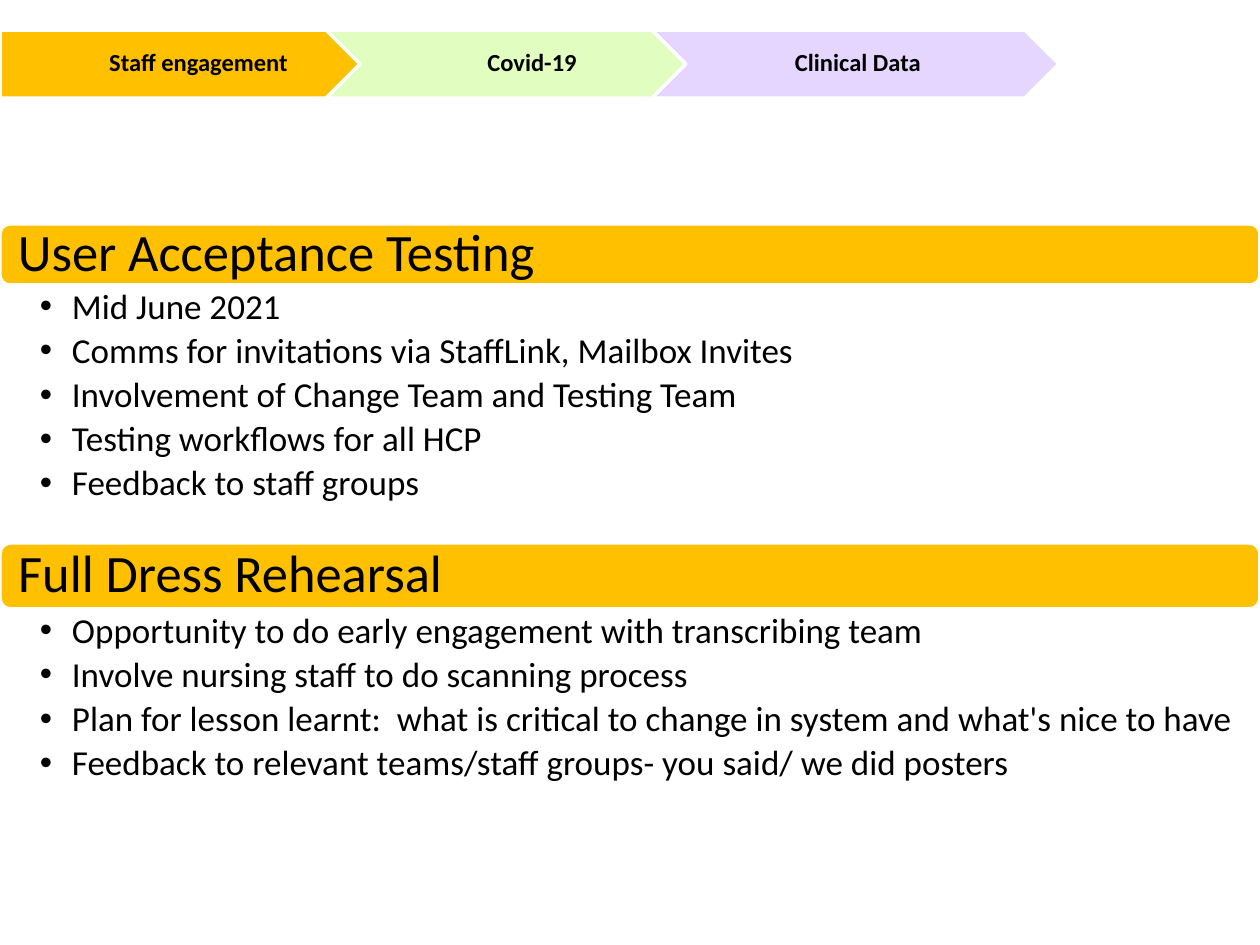
from lxml.etree import SubElement
from pptx import Presentation
from pptx.dml.color import RGBColor
from pptx.enum.shapes import MSO_SHAPE as SHAPE
from pptx.enum.text import MSO_ANCHOR as ANCHOR, MSO_AUTO_SIZE as AUTO, PP_ALIGN as ALIGN
from pptx.oxml.ns import qn
from pptx.util import Emu, Pt

PX_PER_INCH = 126
WIDTH, HEIGHT = 1260, 945

AMBER = RGBColor(0xFF, 0xC0, 0x00)
GREEN = RGBColor(0xE1, 0xFE, 0xC0)
LILAC = RGBColor(0xE5, 0xD6, 0xFF)
WHITE = RGBColor(0xFF, 0xFF, 0xFF)
BLACK = RGBColor(0x00, 0x00, 0x00)


def px(n):
    return Emu(round(n * 914400 / PX_PER_INCH))


def write(p, text, size, bold=False, align=ALIGN.LEFT, after=0):
    """Fill one paragraph with text in the slide's font."""
    p.alignment = align
    p.line_spacing = 0.9
    p.space_after = Pt(after)
    r = p.add_run()
    r.text = text
    r.font.name = "Calibri"
    r.font.size = Pt(size)
    r.font.bold = bold
    r.font.color.rgb = BLACK


class Deck:
    """Holds the style and the current slide."""

    indent = 32

    def __init__(self):
        self.prs = Presentation()
        self.prs.slide_width, self.prs.slide_height = px(WIDTH), px(HEIGHT)
        self.s = self.prs.slides.add_slide(self.prs.slide_layouts[6])

    def frame(self, sp, left, top, right, bottom, anchor):
        tf = sp.text_frame
        tf.word_wrap = True
        tf.auto_size = AUTO.NONE
        tf.vertical_anchor = anchor
        tf.margin_left, tf.margin_top = px(left), px(top)
        tf.margin_right, tf.margin_bottom = px(right), px(bottom)
        return tf

    def shape(self, kind, x, y, w, h, fill):
        sp = self.s.shapes.add_shape(kind, px(x), px(y), px(w), px(h))
        sp.shadow.inherit = False
        sp.fill.solid()
        sp.fill.fore_color.rgb = fill
        sp.line.color.rgb = WHITE
        sp.line.width = Pt(2)
        return sp

    def step(self, kind, x, y, w, h, text, fill, left):
        sp = self.shape(kind, x, y, w, h, fill)
        tf = self.frame(sp, left, 5, 3, 5, ANCHOR.MIDDLE)
        write(tf.paragraphs[0], text, 14, bold=True, align=ALIGN.CENTER)

    def heading(self, y, h, text):
        sp = self.shape(SHAPE.ROUNDED_RECTANGLE, 0, y, WIDTH, h, AMBER)
        tf = self.frame(sp, 15, 0, 15, 0, ANCHOR.MIDDLE)
        write(tf.paragraphs[0], text, 30)

    def bullets(self, y, h, items):
        sp = self.s.shapes.add_textbox(0, px(y), px(WIDTH), px(h))
        tf = self.frame(sp, 40, 4, 20, 4, ANCHOR.TOP)
        for i, item in enumerate(items):
            p = tf.add_paragraph() if i else tf.paragraphs[0]
            p.level = 1
            pPr = p._p.get_or_add_pPr()
            pPr.set("marL", str(px(self.indent)))
            pPr.set("indent", str(-px(self.indent)))
            SubElement(pPr, qn("a:buFont"), typeface="Arial")
            SubElement(pPr, qn("a:buChar"), char="•")
            write(p, item, 20, after=3.6)


STEPS = [
    (SHAPE.PENTAGON, "Staff engagement", AMBER, 10),
    (SHAPE.CHEVRON, "Covid-19", GREEN, 8),
    (SHAPE.CHEVRON, "Clinical Data", LILAC, 8),
]

# heading top, heading height, list height, heading, list items
SECTIONS = [
    (224, 61, 258, "User Acceptance Testing", [
        "Mid June 2021",
        "Comms for invitations via StaffLink, Mailbox Invites",
        "Involvement of Change Team and Testing Team",
        "Testing workflows for all HCP",
        "Feedback to staff groups",
    ]),
    (543, 66, 188, "Full Dress Rehearsal", [
        "Opportunity to do early engagement with transcribing team",
        "Involve nursing staff to do scanning process",
        "Plan for lesson learnt:  what is critical to change in system and what's nice to have",
        "Feedback to relevant teams/staff groups- you said/ we did posters",
    ]),
]


def main():
    deck = Deck()

    # Row of overlapping arrows
    for i, (kind, text, fill, left) in enumerate(STEPS):
        deck.step(kind, i * 326, 30, 407, 68, text, fill, left)

    # Headed bullet lists
    for top, bar, body, title, items in SECTIONS:
        deck.heading(top, bar, title)
        deck.bullets(top + bar, body, items)

    deck.prs.save("out.pptx")


if __name__ == "__main__":
    main()
